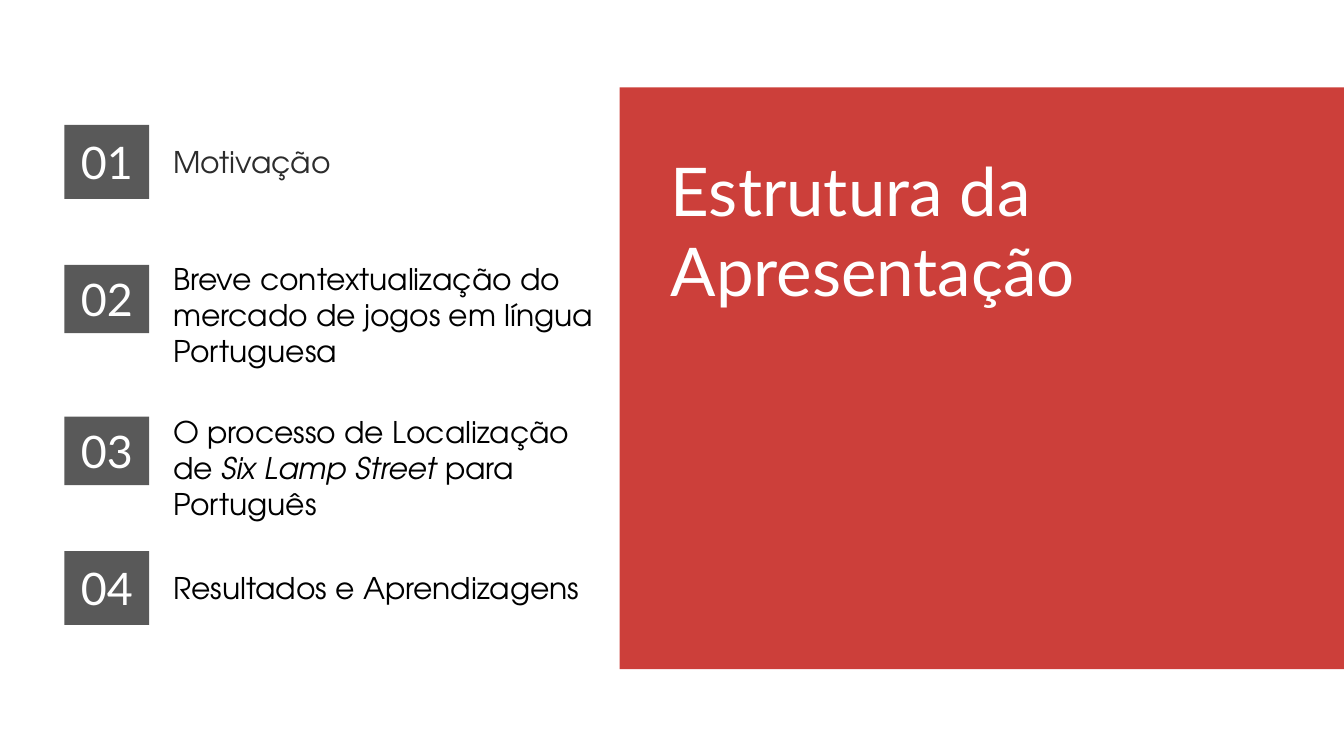
import pptx
import pptx.util
import pptx.dml.color
import pptx.enum.shapes
import pptx.enum.text
from dataclasses import dataclass

Inches = pptx.util.Inches
Anchor = pptx.enum.text.MSO_ANCHOR
Align = pptx.enum.text.PP_ALIGN
AutoSize = pptx.enum.text.MSO_AUTO_SIZE


@dataclass(frozen=True)
class Theme:
    panel: str = "CC3F3A"
    badge: str = "595959"
    light: str = "FFFFFF"
    soft: str = "2C2C2C"
    dark: str = "000000"
    heading_font: str = "Lato"
    body_font: str = "TeX Gyre Adventor"
    title_size: int = 36
    badge_size: int = 24
    body_size: int = 16


theme = Theme()
HEADING = "Estrutura da Apresentação"
TALL_BADGE, SHORT_BADGE = 0.55, 0.51
TOPICS = [
    dict(top=0.93, badge=TALL_BADGE, label=(1.02, 2.36, 0.37), color=theme.soft,
         runs=[("Motivação", False)]),
    dict(top=1.97, badge=SHORT_BADGE, label=(1.89, 3.34, 1.21), color=theme.dark,
         runs=[("Breve contextualização do mercado de jogos em língua Portuguesa", False)]),
    dict(top=3.10, badge=SHORT_BADGE, label=(3.03, 3.42, 0.91), color=theme.dark,
         runs=[("O processo de Localização de ", False), ("Six Lamp Street ", True),
               ("para Português", False)]),
    dict(top=4.10, badge=TALL_BADGE, label=(4.19, 3.67, 0.37), color=theme.dark,
         runs=[("Resultados e Aprendizagens", False)]),
]

SLIDE_W = 10
SLIDE_H = SLIDE_W * 9 / 16
PANEL_LEFT, PANEL_TOP, PANEL_H = 4.61, 0.65, 4.33
BADGE_LEFT, BADGE_W = 0.48, 0.63
LABEL_LEFT = 1.19


def apply(target, values):
    for name, value in values.items():
        setattr(target, name, value)


def write(paragraph, runs, font, size, color):
    for text, italic in runs:
        run = paragraph.add_run()
        run.text = text
        apply(run.font, dict(name=font, size=pptx.util.Pt(size), italic=italic, bold=False))
        run.font.color.rgb = pptx.dml.color.RGBColor.from_string(color)


def add_block(slide, left, top, width, height, color):
    block = slide.shapes.add_shape(
        pptx.enum.shapes.MSO_SHAPE.RECTANGLE, *map(Inches, (left, top, width, height)))
    block.fill.solid()
    block.fill.fore_color.rgb = pptx.dml.color.RGBColor.from_string(color)
    block.line.fill.background()
    block.shadow.inherit = False
    return block


def add_heading(slide):
    panel = add_block(slide, PANEL_LEFT, PANEL_TOP, SLIDE_W - PANEL_LEFT, PANEL_H, theme.panel)
    heading = slide.shapes.title
    heading.element.addprevious(panel.element)
    apply(heading, dict(left=Inches(4.89), top=Inches(0.93),
                        width=Inches(4.6), height=Inches(1.48)))
    margins = {f"margin_{side}": Inches(0.1) for side in ("left", "right", "top", "bottom")}
    apply(heading.text_frame, dict(margins, word_wrap=True, auto_size=AutoSize.NONE,
                                   vertical_anchor=Anchor.BOTTOM))
    paragraph = heading.text_frame.paragraphs[0]
    paragraph.alignment = Align.LEFT
    write(paragraph, [(HEADING, False)], theme.heading_font, theme.title_size, theme.light)


def add_topic(slide, number, topic):
    badge = add_block(slide, BADGE_LEFT, topic["top"], BADGE_W, topic["badge"], theme.badge)
    badge.text_frame.vertical_anchor = Anchor.MIDDLE
    numeral = badge.text_frame.paragraphs[0]
    numeral.alignment = Align.CENTER
    write(numeral, [(f"{number:02d}", False)],
          theme.heading_font, theme.badge_size, theme.light)

    label = slide.shapes.add_textbox(*map(Inches, (LABEL_LEFT, *topic["label"])))
    apply(label.text_frame, dict(word_wrap=True, auto_size=AutoSize.SHAPE_TO_FIT_TEXT))
    write(label.text_frame.paragraphs[0], topic["runs"],
          theme.body_font, theme.body_size, topic["color"])


def main():
    deck = pptx.Presentation()
    apply(deck, dict(slide_width=Inches(SLIDE_W), slide_height=Inches(SLIDE_H)))
    slide = deck.slides.add_slide(deck.slide_layouts[5])
    add_heading(slide)
    for number, topic in enumerate(TOPICS, start=1):
        add_topic(slide, number, topic)
    deck.save("out.pptx")


if __name__ == "__main__":
    main()
